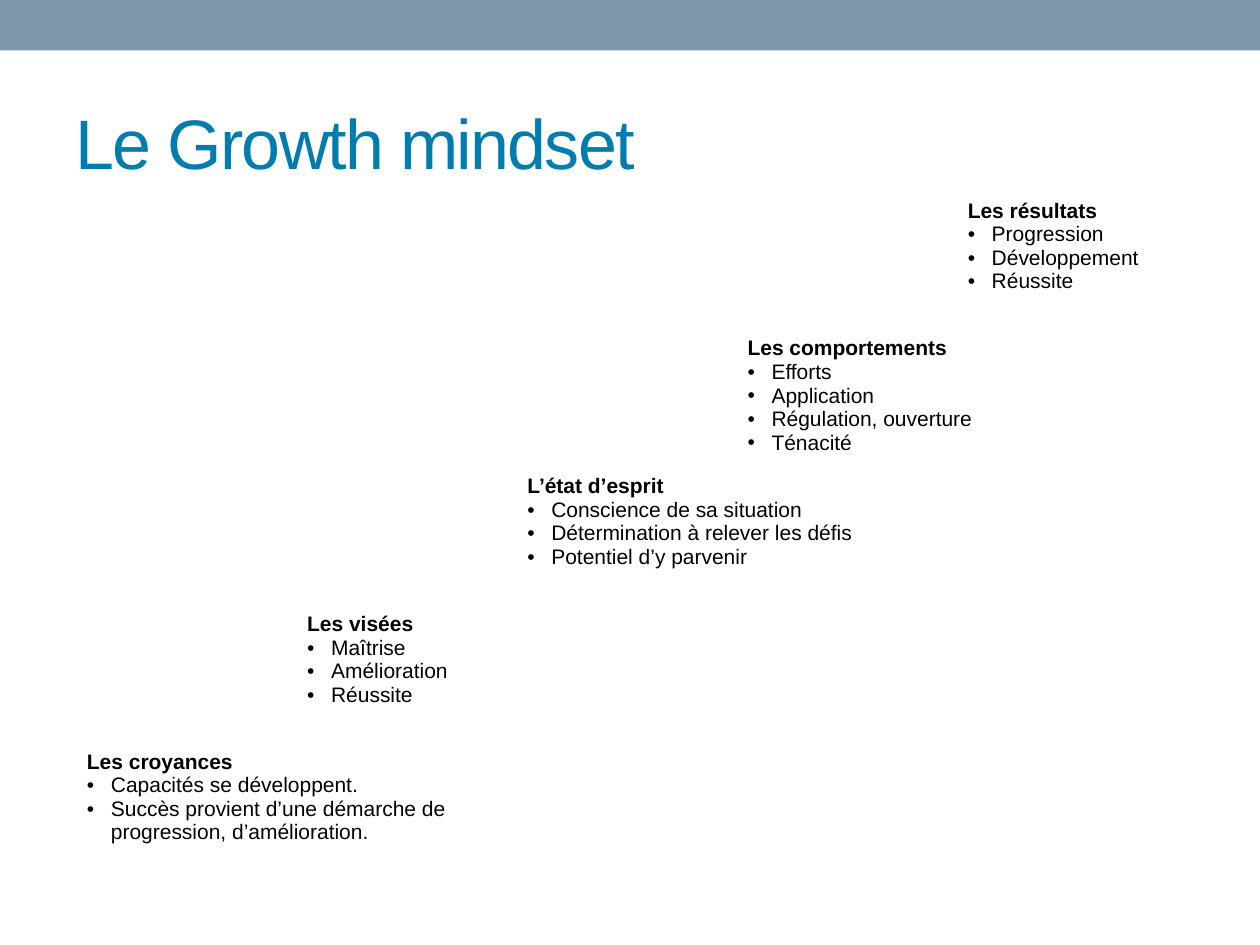
from pptx import Presentation
from pptx import util as u
from pptx.dml.color import RGBColor
from pptx.enum import shapes, text
from pptx.oxml.ns import qn
from lxml import etree

TITLE = "Le Growth mindset"
# Steps from the top right to the bottom left: heading, items, columns spanned
STEPS = [
    ("Les résultats", ["Progression", "Développement", "Réussite"], 1),
    ("Les comportements",
     ["Efforts", "Application", "Régulation, ouverture", "Ténacité"], 2),
    ("L’état d’esprit",
     ["Conscience de sa situation", "Détermination à relever les défis",
      "Potentiel d’y parvenir"], 2),
    ("Les visées", ["Maîtrise", "Amélioration", "Réussite"], 1),
    ("Les croyances",
     ["Capacités se développent.",
      "Succès provient d’une démarche de progression, d’amélioration."], 2),
]
COLORS = {"band": "7E97AD", "title": "007CAF", "text": "000000"}
TITLE_FONT = {"name": "Arial", "size": u.Pt(40), "bold": False}
STEP_FONT = {"name": "Arial", "size": u.Pt(12)}


def color(name):
    return RGBColor.from_string(COLORS[name])


def format_font(font, values, color_name):
    for name, value in values.items():
        setattr(font, name, value)
    font.color.rgb = color(color_name)


def add_bullet(paragraph):
    properties = paragraph._p.get_or_add_pPr()
    indent = u.Inches(0.19)
    properties.set("marL", str(indent))
    properties.set("indent", str(-indent))
    etree.SubElement(properties, qn("a:buFont")).set("typeface", "Arial")
    etree.SubElement(properties, qn("a:buChar")).set("char", "•")


def fill_step(cell, heading, items):
    frame = cell.text_frame
    for index, line in enumerate([heading, *items]):
        paragraph = frame.add_paragraph() if index else frame.paragraphs[0]
        run = paragraph.add_run()
        run.text = line
        format_font(run.font, {**STEP_FONT, "bold": index == 0}, "text")
        if index:
            add_bullet(paragraph)


presentation = Presentation()
presentation.slide_width, presentation.slide_height = u.Inches(10), u.Inches(7.5)
slide = presentation.slides.add_slide(presentation.slide_layouts[5])

# Top band
band = slide.shapes.add_shape(shapes.MSO_SHAPE.RECTANGLE, 0, 0,
                              presentation.slide_width, u.Inches(0.4))
band.shadow.inherit = False
band.fill.solid()
band.fill.fore_color.rgb = color("band")
band.line.fill.background()

# Title
title = slide.shapes.title
title.left, title.top, title.width, title.height = map(
    u.Inches, (0.5, 0.58, 9, 1.08))
title.text_frame.vertical_anchor = text.MSO_ANCHOR.MIDDLE
paragraph = title.text_frame.paragraphs[0]
paragraph.alignment = text.PP_ALIGN.LEFT
run = paragraph.add_run()
run.text = TITLE
format_font(run.font, TITLE_FONT, "title")
run.font._element.set("spc", "-100")

# Staircase table, one step per row
count = len(STEPS)
table = slide.shapes.add_table(count, count, u.Inches(0.59), u.Inches(1.53),
                               u.Inches(8.74), u.Inches(5.47)).table
table.first_row = table.horz_banding = False
for cell in table.iter_cells():
    cell.fill.background()
for row, (heading, items, span) in enumerate(STEPS):
    column = count - 1 - row
    cell = table.cell(row, column)
    if span > 1:
        cell.merge(table.cell(row, column + span - 1))
    fill_step(cell, heading, items)

presentation.save("out.pptx")
